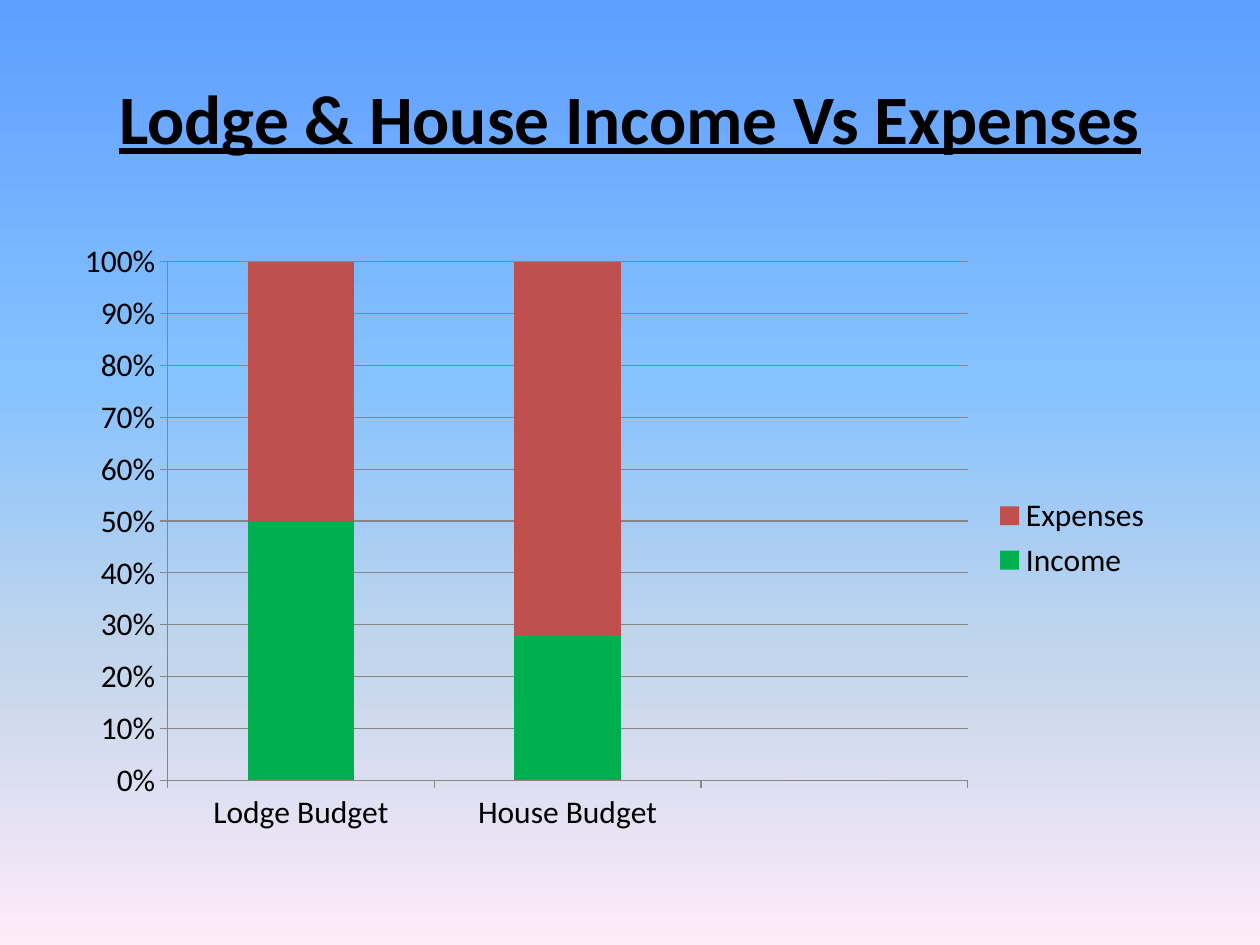
from copy import deepcopy

from lxml.etree import SubElement
from pptx import Presentation
from pptx.chart.data import CategoryChartData
from pptx.dml.color import RGBColor
from pptx.enum.chart import XL_CHART_TYPE, XL_LEGEND_POSITION, XL_TICK_MARK
from pptx.enum.text import MSO_ANCHOR, PP_ALIGN
from pptx.oxml.ns import qn
from pptx.util import Pt

PX = 914400 / 126
FONT = "Calibri"
COLORS = {"text": "000000", "line": "868686", "Income": "00B050", "Expenses": "C0504D"}
SKY = [(0, "5E9EFF"), (0.4, "85C2FF"), (0.7, "C4D6EB"), (1, "FFEBFA")]
CATEGORIES = ["Lodge Budget", "House Budget", ""]
BUDGETS = {"Income": [50, 28, None], "Expenses": [50, 72, 0]}


def px(*lengths):
    return [round(n * PX) for n in lengths]


def rgb(name):
    return RGBColor.from_string(COLORS[name])


def set_font(font, size):
    font.name, font.size = FONT, Pt(size)
    font.color.rgb = rgb("text")


def paint_background(s):
    fill = s.background.fill
    fill.gradient()
    fill.gradient_angle = 270
    stops = s.element.find(".//" + qn("a:gsLst"))
    while len(stops) < len(SKY):
        stops.append(deepcopy(stops[0]))
    for stop, (position, color) in zip(fill.gradient_stops, SKY):
        stop.position = position
        stop.color.rgb = RGBColor.from_string(color)


def add_title(s, text, box):
    tf = s.shapes.add_textbox(*px(*box)).text_frame
    tf.word_wrap = True
    tf.vertical_anchor = MSO_ANCHOR.MIDDLE
    p = tf.paragraphs[0]
    p.text = text
    p.alignment = PP_ALIGN.CENTER
    set_font(p.font, 39.6)
    p.font.bold = p.font.underline = True


def place_plot(chart, box, plot):
    """Fix the inner plot area, given on the slide in px, within the chart's box."""
    area = chart.element.find(".//" + qn("c:plotArea"))
    layout = area.find(qn("c:layout"))
    if layout is None:
        layout = SubElement(area, qn("c:layout"))
        area.insert(0, layout)
    manual = SubElement(layout, qn("c:manualLayout"))
    left, top, width, height = box
    x, y, w, h = plot
    values = {
        "layoutTarget": "inner", "xMode": "edge", "yMode": "edge",
        "x": round((x - left) / width, 3), "y": round((y - top) / height, 3),
        "w": round(w / width, 3), "h": round(h / height, 3),
    }
    for tag, value in values.items():
        SubElement(manual, qn("c:" + tag)).set("val", str(value))


def style_axes(chart):
    value_axis = chart.value_axis
    value_axis.has_major_gridlines = True
    value_axis.major_unit = 0.1
    value_axis.tick_labels.number_format = "0%"
    value_axis.tick_labels.number_format_is_linked = False
    for axis in (chart.category_axis, value_axis):
        axis.major_tick_mark = XL_TICK_MARK.OUTSIDE
    for part in (chart.category_axis, value_axis, value_axis.major_gridlines):
        part.format.line.color.rgb = rgb("line")
        part.format.line.width = Pt(0.75)


def add_budget_chart(s, box, plot_box):
    data = CategoryChartData()
    data.categories = CATEGORIES
    for name, values in BUDGETS.items():
        data.add_series(name, values)
    chart = s.shapes.add_chart(XL_CHART_TYPE.COLUMN_STACKED_100, *px(*box), data).chart
    set_font(chart.font, 18)
    chart.has_title = False
    chart.has_legend = True
    chart.legend.position = XL_LEGEND_POSITION.RIGHT
    chart.legend.include_in_layout = False
    plot = chart.plots[0]
    plot.vary_by_categories = False
    plot.gap_width, plot.overlap = 150, 100
    for series in plot.series:
        series.format.fill.solid()
        series.format.fill.fore_color.rgb = rgb(series.name)
    style_axes(chart)
    place_plot(chart, box, plot_box)


def main():
    prs = Presentation()
    prs.slide_width, prs.slide_height = px(1260, 945)
    s = prs.slides.add_slide(prs.slide_layouts[6])
    paint_background(s)
    add_title(s, "Lodge & House Income Vs Expenses", (63, 38, 1134, 157))
    add_budget_chart(s, (63, 231, 1102, 614), (168, 262, 800, 519))
    prs.save("out.pptx")


if __name__ == "__main__":
    main()
